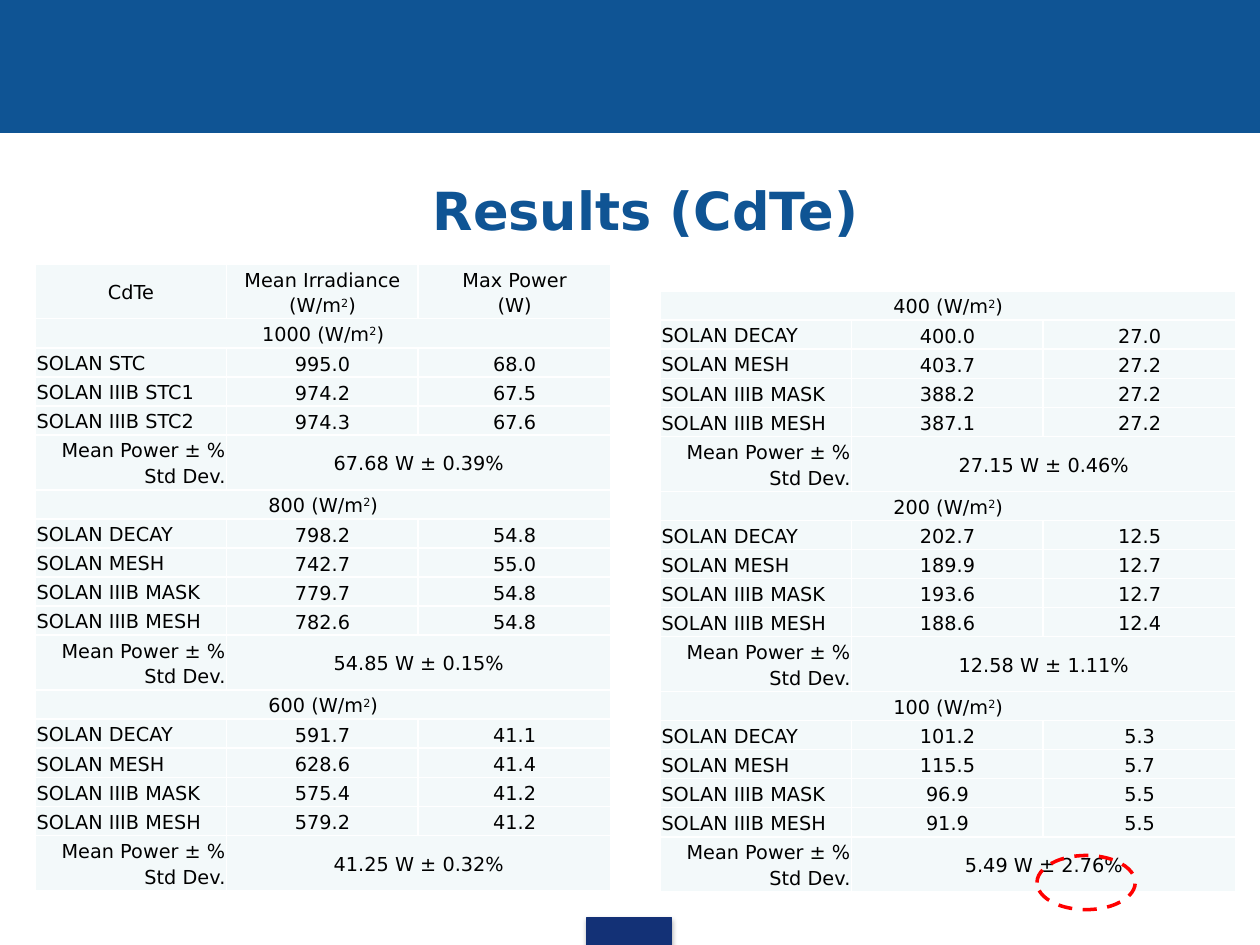
"""Build the CdTe results slide: two measurement tables and a highlighted deviation."""
from lxml import etree
from pptx import Presentation
from pptx.dml.color import RGBColor
from pptx.enum.dml import MSO_LINE_DASH_STYLE as Dash
from pptx.enum.shapes import MSO_SHAPE as Shape
from pptx.enum.text import MSO_ANCHOR as Anchor, PP_ALIGN as Align
from pptx.oxml import parse_xml
from pptx.oxml.ns import nsdecls, qn
from pptx.util import Inches, Pt

FONT = "DejaVu Sans"
BLUE, NAVY, PALE, WHITE, BLACK, RED = "0F5494", "133176", "F3F9FA", "FFFFFF", "000000", "FF0000"
SHORT, TALL, HEADER = 3.08, 5.81, 5.73


def color(value):
    return RGBColor.from_string(value)


def fill_cell(cell, text, align, anchor):
    """Format a cell and write its lines, raising what follows a caret."""
    properties = cell._tc.get_or_add_tcPr()
    for side in ("lnL", "lnR", "lnT", "lnB"):
        properties.append(parse_xml(
            f'<a:{side} {nsdecls("a")} w="12700"><a:solidFill>'
            f'<a:srgbClr val="{WHITE}"/></a:solidFill></a:{side}>'))
    cell.fill.solid()
    cell.fill.fore_color.rgb = color(PALE)
    cell.margin_left = cell.margin_right = cell.margin_top = cell.margin_bottom = Inches(0.01)
    cell.vertical_anchor = anchor
    for index, line in enumerate(text.split("\n")):
        frame = cell.text_frame
        para = frame.add_paragraph() if index else frame.paragraphs[0]
        para.alignment, para.line_spacing = align, 1.15
        font = para.font
        font.name, font.size, font.bold = FONT, Pt(11), False
        font.color.rgb = color(BLACK)
        for part in line.replace("²", "|²|").split("|"):
            span = para.add_run()
            span.text = part.replace("²", "2")
            if part == "²":
                span.font._element.set("baseline", "30000")


deck = Presentation()
deck.slide_width, deck.slide_height = Inches(10), Inches(7.5)
column, row = deck.slide_width / 100, deck.slide_height / 100
page = deck.slides.add_slide(deck.slide_layouts[5])

title = page.shapes.title
title.left, title.top = int(4.3 * column), int(15.33 * row)
title.width, title.height = int(90 * column), int(13.6 * row)
title.text_frame.text = "Results (CdTe)"
title.text_frame.vertical_anchor = Anchor.MIDDLE
para = title.text_frame.paragraphs[0]
para.alignment = Align.CENTER
para._p.get_or_add_pPr().set("marL", str(Inches(0.39)))
para.font.name, para.font.size, para.font.bold = FONT, Pt(30), True
para.font.color.rgb = color(BLUE)

for left, top, width, height, tone in [(0, 0, 100, 14, BLUE), (46.6, 97.07, 6.7, 2.93, NAVY)]:
    band = page.shapes.add_shape(Shape.RECTANGLE, int(left * column), int(top * row),
                                 int(width * column), int(height * row))
    band.shadow.inherit = False
    band.fill.solid()
    band.fill.fore_color.rgb = band.line.color.rgb = color(tone)
    band.line.width = Pt(0.75)
shadow = etree.SubElement(band._element.spPr.find(qn("a:effectLst")), qn("a:outerShdw"),
                          blurRad=str(Pt(3.1)), dist=str(Pt(1.8)), dir="5400000", rotWithShape="0")
tint = etree.SubElement(shadow, qn("a:srgbClr"), val=BLACK)
etree.SubElement(tint, qn("a:alpha"), val="35000")

stc = ["SOLAN STC", "SOLAN IIIB STC1", "SOLAN IIIB STC2"]
filters = ["SOLAN DECAY", "SOLAN MESH", "SOLAN IIIB MASK", "SOLAN IIIB MESH"]
headings = ["CdTe", "Mean Irradiance\n(W/m²)", "Max Power\n(W)"]
left_groups = [
    ("1000", stc, "995.0 974.2 974.3", "68.0 67.5 67.6", "67.68 W ± 0.39%"),
    ("800", filters, "798.2 742.7 779.7 782.6", "54.8 55.0 54.8 54.8", "54.85 W ± 0.15%"),
    ("600", filters, "591.7 628.6 575.4 579.2", "41.1 41.4 41.2 41.2", "41.25 W ± 0.32%"),
]
right_groups = [
    ("400", filters, "400.0 403.7 388.2 387.1", "27.0 27.2 27.2 27.2", "27.15 W ± 0.46%"),
    ("200", filters, "202.7 189.9 193.6 188.6", "12.5 12.7 12.7 12.4", "12.58 W ± 1.11%"),
    ("100", filters, "101.2 115.5 96.9 91.9", "5.3 5.7 5.5 5.5", "5.49 W ± 2.76%"),
]

for left, top, header, groups in [(2.8, 28, [headings], left_groups),
                                  (52.4, 30.8, [], right_groups)]:
    lines = [(HEADER, cells) for cells in header]
    for level, names, irradiances, powers, mean in groups:
        lines.append((SHORT, [f"{level} (W/m²)"]))
        lines += [(SHORT, cells) for cells in zip(names, irradiances.split(), powers.split())]
        lines.append((TALL, ["Mean Power ± % Std Dev.", mean]))
    total = sum(height for height, cells in lines)
    table = page.shapes.add_table(len(lines), 3, int(left * column), int(top * row),
                                  int(45.7 * column), int(total * row)).table
    table.first_row = table.horz_banding = False
    for table_column, width in zip(table.columns, (15.2, 15.2, 15.3)):
        table_column.width = int(width * column)
    for index, (height, cells) in enumerate(lines):
        table.rows[index].height = int(height * row)
        is_data = height == SHORT and len(cells) == 3
        for place in range(3):
            text = cells[place] if place < len(cells) else ""
            align, anchor = Align.CENTER, Anchor.MIDDLE
            if place == 0 and is_data:
                align = Align.LEFT
            elif place == 0 and height == TALL:
                align = Align.RIGHT
            elif is_data:
                anchor = Anchor.BOTTOM
            fill_cell(table.cell(index, place), text, align, anchor)
        if len(cells) < 3:
            table.cell(index, len(cells) - 1).merge(table.cell(index, 2))

highlight = page.shapes.add_shape(Shape.OVAL, int(82.3 * column), int(90.53 * row),
                                  int(7.8 * column), int(5.73 * row))
highlight.shadow.inherit = False
highlight.fill.background()
highlight.line.color.rgb = color(RED)
highlight.line.width = Pt(2)
highlight.line.dash_style = Dash.DASH

deck.save("out.pptx")
